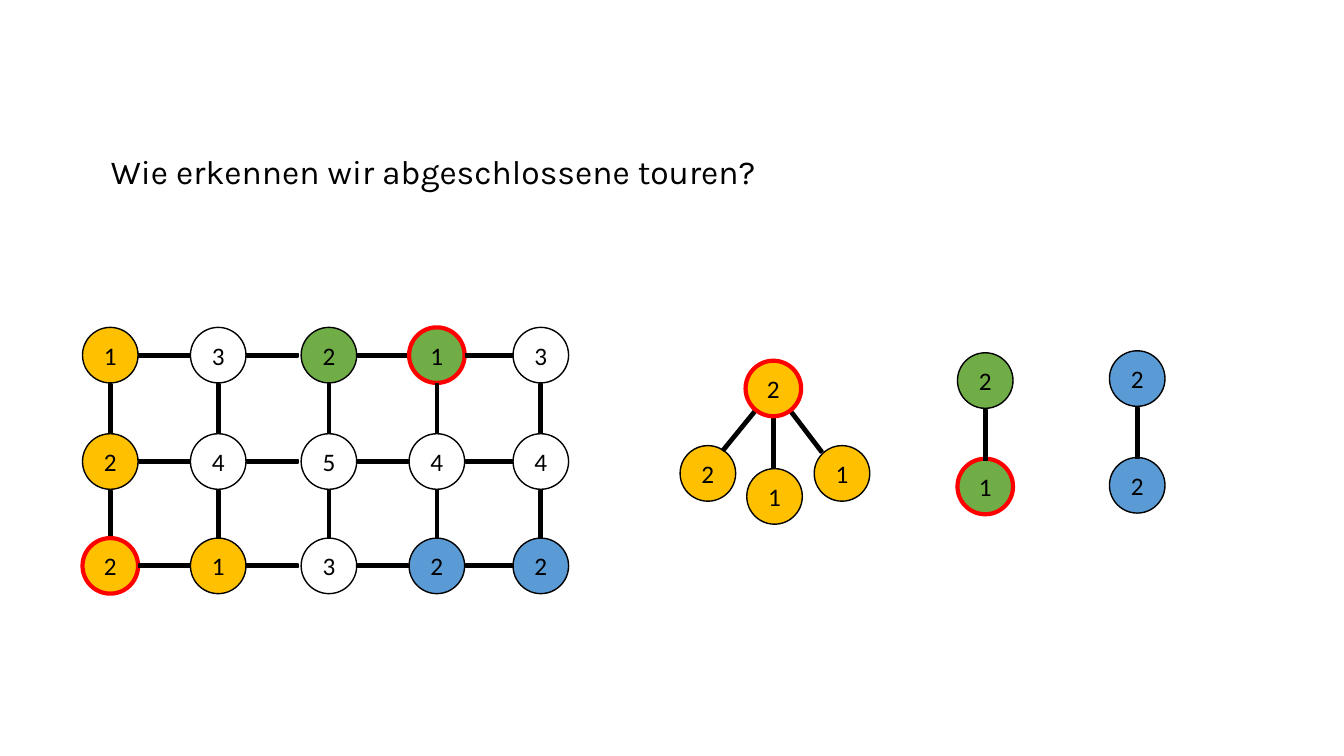
"""Builds the slide on recognising finished tours in a numbered graph."""
from dataclasses import dataclass
from itertools import product
from math import cos, radians, sin

from pptx import Presentation
from pptx import util as u
from pptx.dml.color import RGBColor
from pptx.enum import shapes, text


@dataclass(frozen=True)
class Theme:
    """Colours, fonts and type sizes of the slide."""
    ink: str = "000000"
    ring: str = "FF0000"
    white: str = "FFFFFF"
    yellow: str = "FFC000"
    green: str = "70AD47"
    blue: str = "5B9BD5"
    title_font: str = "Karla"
    node_font: str = "Calibri"
    title_size: int = 24
    node_size: int = 18
    thin: int = 1
    thick: int = 3


T = Theme()
NODE = 1.4
EDGE_LENGTH, EDGE_HEIGHT = 1.75, 0.36
EDGE_OFFSET = 1.37

COLUMNS = (2.78, 5.5, 8.29, 11.01, 13.63)
ROWS = (8.95, 11.63, 14.26)
NUMBERS = ("13213", "24544", "21322")
FILLS = (
    (T.yellow, T.white, T.green, T.green, T.white),
    (T.yellow, T.white, T.white, T.white, T.white),
    (T.yellow, T.yellow, T.white, T.blue, T.blue),
)
MARKED = {(0, 3), (2, 0)}


def add_run(p, words, font, size):
    """Append one run in the ink colour to a paragraph."""
    r = p.add_run()
    r.text = words
    r.font.name = font
    r.font.size = u.Pt(size)
    r.font.color.rgb = RGBColor.from_string(T.ink)


def add_title(s, words):
    """Place and format the title placeholder."""
    sp = s.shapes.title
    sp.left, sp.top, sp.width, sp.height = map(u.Cm, (2.54, 3.68, 28.83, 1.27))
    tf = sp.text_frame
    tf.word_wrap = True
    tf.auto_size = text.MSO_AUTO_SIZE.NONE
    tf.vertical_anchor = text.MSO_ANCHOR.TOP
    p = tf.paragraphs[0]
    p.alignment = text.PP_ALIGN.LEFT
    add_run(p, words, T.title_font, T.title_size)


def add_centred(s, kind, x, y, width, height, fill, line, weight):
    """Add a filled and outlined shape around a centre point."""
    sp = s.shapes.add_shape(kind, u.Cm(x - width / 2), u.Cm(y - height / 2),
                            u.Cm(width), u.Cm(height))
    sp.shadow.inherit = False
    sp.fill.solid()
    sp.fill.fore_color.rgb = RGBColor.from_string(fill)
    sp.line.color.rgb = RGBColor.from_string(line)
    sp.line.width = u.Pt(weight)
    return sp


def add_node(s, x, y, number, fill, marked=False):
    """Add a numbered circle, ringed when it is marked."""
    line, weight = (T.ring, T.thick) if marked else (T.ink, T.thin)
    sp = add_centred(s, shapes.MSO_SHAPE.OVAL, x, y, NODE, NODE, fill, line, weight)
    tf = sp.text_frame
    tf.vertical_anchor = text.MSO_ANCHOR.MIDDLE
    p = tf.paragraphs[0]
    p.alignment = text.PP_ALIGN.CENTER
    add_run(p, number, T.node_font, T.node_size)


def add_edge(s, x, y, angle):
    """Add a bar that leaves the node at x, y under an angle."""
    a = radians(angle)
    sp = add_centred(s, shapes.MSO_SHAPE.MATH_MINUS,
                     x + EDGE_OFFSET * cos(a), y + EDGE_OFFSET * sin(a),
                     EDGE_LENGTH, EDGE_HEIGHT, T.ink, T.ink, T.thin)
    sp.adjustments[0] = 0.235
    sp.rotation = angle


def add_grid(s):
    """Add the grid graph with edges to the right and downwards."""
    for (i, y), (j, x) in product(enumerate(ROWS), enumerate(COLUMNS)):
        add_node(s, x, y, NUMBERS[i][j], FILLS[i][j], (i, j) in MARKED)
        if j < len(COLUMNS) - 1:
            add_edge(s, x, y, 0)
        if i < len(ROWS) - 1:
            add_edge(s, x, y, 90)


def add_tree(s, fill, root, children):
    """Add a root node with its edges and children."""
    x, y, number, marked = root
    for child_x, child_y, child_number, child_marked, angle in children:
        add_node(s, child_x, child_y, child_number, fill, child_marked)
        add_edge(s, x, y, angle)
    add_node(s, x, y, number, fill, marked)


def main():
    """Build and save the slide."""
    prs = Presentation()
    prs.slide_width, prs.slide_height = u.Cm(33.87), u.Cm(19.05)
    s = prs.slides.add_slide(prs.slide_layouts[5])
    add_title(s, "Wie erkennen wir abgeschlossene touren?")
    add_grid(s)
    add_tree(s, T.yellow, (19.49, 9.79, "2", True), [
        (21.22, 11.93, "1", False, 52.7),
        (17.84, 11.93, "2", False, 129.2),
        (19.52, 12.51, "1", False, 90),
    ])
    add_tree(s, T.green, (24.83, 9.59, "2", False), [(24.83, 12.26, "1", True, 90)])
    add_tree(s, T.blue, (28.66, 9.54, "2", False), [(28.66, 12.23, "2", False, 90)])
    prs.save("out.pptx")


if __name__ == "__main__":
    main()
